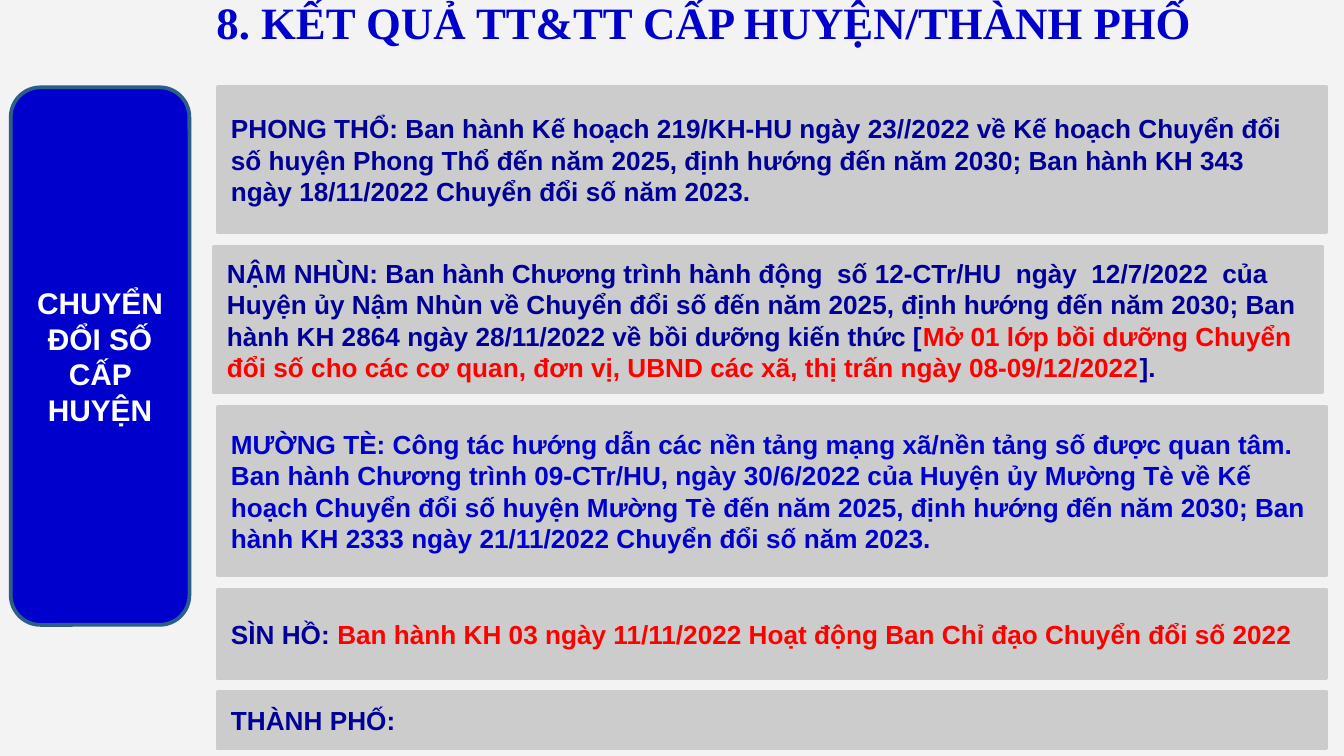
from typing import NamedTuple

from pptx import Presentation
from pptx.dml.color import RGBColor
from pptx.enum import shapes, text
from pptx.util import Inches, Pt

BACKGROUND = RGBColor(0xF3, 0xF3, 0xF3)
BLUE = RGBColor(0x00, 0x00, 0xCC)
NAVY = RGBColor(0x00, 0x00, 0x99)
RED = RGBColor(0xFF, 0x00, 0x00)
WHITE = RGBColor(0xFF, 0xFF, 0xFF)
GREY = RGBColor(0xCC, 0xCC, 0xCC)
BORDER = RGBColor(0x2B, 0x5F, 0x8A)


class Span(NamedTuple):
    words: str
    color: RGBColor


class Box(NamedTuple):
    left: float
    top: float
    width: float
    height: float


class District(NamedTuple):
    box: Box
    spans: list[Span]


PANEL_LEFT, PANEL_WIDTH = 1.62, 8.25

DISTRICTS = [
    District(Box(PANEL_LEFT, 0.65, PANEL_WIDTH, 1.08), [
        Span("PHONG THỔ: Ban hành Kế hoạch 219/KH-HU ngày 23//2022 về Kế hoạch "
             "Chuyển đổi số huyện Phong Thổ đến năm 2025, định hướng đến năm 2030; "
             "Ban hành KH 343 ngày 18/11/2022 Chuyển đổi số năm 2023.", NAVY),
    ]),
    District(Box(PANEL_LEFT - 0.03, 1.84, PANEL_WIDTH, 1.08), [
        Span("NẬM NHÙN: Ban hành Chương trình hành động  số 12-CTr/HU  ngày  "
             "12/7/2022  của Huyện ủy Nậm Nhùn về Chuyển đổi số đến năm 2025, "
             "định hướng đến năm 2030; Ban hành KH 2864 ngày 28/11/2022 về "
             "bồi dưỡng kiến thức [", NAVY),
        Span("Mở 01 lớp bồi dưỡng Chuyển đổi số cho các cơ quan, đơn vị, UBND "
             "các xã, thị trấn ngày 08-09/12/2022", RED),
        Span("].", NAVY),
    ]),
    District(Box(PANEL_LEFT, 3.03, PANEL_WIDTH, 1.25), [
        Span("MƯỜNG TÈ: Công tác hướng dẫn các nền tảng mạng xã/nền tảng số được "
             "quan tâm. Ban hành Chương trình 09-CTr/HU, ngày 30/6/2022 của Huyện "
             "ủy Mường Tè về Kế hoạch Chuyển đổi số huyện Mường Tè đến năm 2025, "
             "định hướng đến năm 2030; Ban hành KH 2333 ngày 21/11/2022 "
             "Chuyển đổi số năm 2023.", BLUE),
    ]),
    District(Box(PANEL_LEFT, 4.39, PANEL_WIDTH, 0.66), [
        Span("SÌN HỒ: ", NAVY),
        Span("Ban hành KH 03 ngày 11/11/2022 Hoạt động Ban Chỉ đạo "
             "Chuyển đổi số 2022", RED),
    ]),
    District(Box(PANEL_LEFT, 5.15, PANEL_WIDTH, 0.42), [Span("THÀNH PHỐ:", NAVY)]),
]


def write_spans(shape, spans: list[Span], size: int, alignment, font_name: str = "Arial") -> None:
    """Fill the shape with one bold paragraph, a run for each span."""
    shape.text_frame.word_wrap = True
    paragraph = shape.text_frame.paragraphs[0]
    paragraph.alignment = alignment
    for span in spans:
        run = paragraph.add_run()
        run.text = span.words
        run.font.name = font_name
        run.font.size = Pt(size)
        run.font.bold = True
        run.font.color.rgb = span.color


def add_panel(slide, kind, box: Box, fill: RGBColor, line: RGBColor):
    shape = slide.shapes.add_shape(kind, *map(Inches, box))
    shape.shadow.inherit = False
    shape.fill.solid()
    shape.fill.fore_color.rgb = fill
    shape.line.color.rgb = line
    shape.line.width = Pt(2)
    shape.text_frame.vertical_anchor = text.MSO_ANCHOR.MIDDLE
    return shape


def add_title(slide) -> None:
    title = slide.shapes.add_textbox(*map(Inches, Box(1.14, -0.14, 8.19, 0.6)))
    frame = title.text_frame
    frame.margin_left = frame.margin_right = Inches(0.1)
    frame.margin_top = frame.margin_bottom = Inches(0.1)
    write_spans(title, [Span("8. KẾT QUẢ TT&TT CẤP HUYỆN/THÀNH PHỐ", BLUE)],
                24, text.PP_ALIGN.CENTER, "Times New Roman")


def main() -> None:
    presentation = Presentation()
    presentation.slide_width = Inches(10)
    presentation.slide_height = Inches(10) * 9 // 16
    slide = presentation.slides.add_slide(presentation.slide_layouts[6])
    slide.background.fill.solid()
    slide.background.fill.fore_color.rgb = BACKGROUND

    add_title(slide)
    topic = add_panel(slide, shapes.MSO_SHAPE.ROUNDED_RECTANGLE,
                      Box(0.08, 0.65, 1.33, 4), BLUE, BORDER)
    write_spans(topic, [Span("CHUYỂN ĐỔI SỐ CẤP HUYỆN", WHITE)], 16, text.PP_ALIGN.CENTER)
    for district in DISTRICTS:
        panel = add_panel(slide, shapes.MSO_SHAPE.RECTANGLE, district.box, GREY, GREY)
        write_spans(panel, district.spans, 14, text.PP_ALIGN.LEFT)

    presentation.save("out.pptx")


if __name__ == "__main__":
    main()
